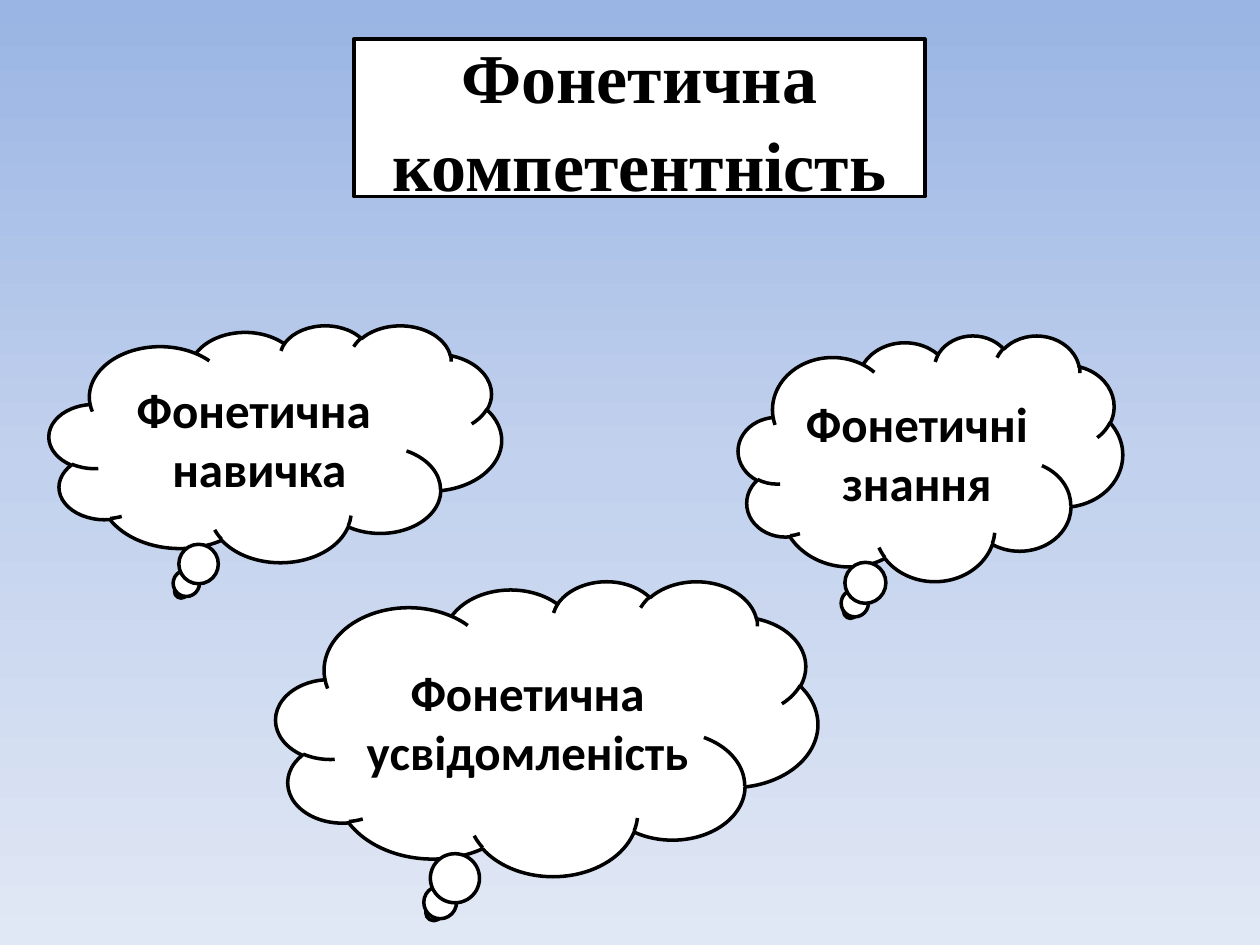
from lxml.etree import SubElement
from pptx import Presentation
from pptx.dml.color import RGBColor
from pptx.enum.shapes import MSO_SHAPE as Shape
from pptx.enum.text import MSO_ANCHOR as Anchor, MSO_AUTO_SIZE as AutoSize, PP_ALIGN as Align
from pptx.oxml.ns import qn
from pptx.util import Inches, Pt

COLORS = {"paper": "FFFFFF", "ink": "000000"}
BACKGROUND_STOPS = [(0, "9AB5E4"), (50, "C2D1ED"), (100, "E1E8F5")]
CLOUDS = [
    ("Фонетична \nнавичка", (0.39, 2.58, 3.59, 1.88)),
    ("Фонетичні \nзнання", (5.86, 2.66, 3.05, 1.95)),
    ("Фонетична\nусвідомленість", (2.19, 4.61, 4.3, 2.34)),
]


def fill_and_label(shape, text, font_name, size):
    """White shape with a black outline and bold centred text."""
    shape.shadow.inherit = False
    shape.fill.solid()
    shape.fill.fore_color.rgb = RGBColor.from_string(COLORS["paper"])
    shape.line.color.rgb = RGBColor.from_string(COLORS["ink"])
    shape.line.width = Pt(2)
    frame = shape.text_frame
    frame.text = text
    frame.word_wrap = True
    frame.auto_size = AutoSize.NONE
    frame.vertical_anchor = Anchor.MIDDLE
    for paragraph in frame.paragraphs:
        paragraph.alignment = Align.CENTER
        for run in paragraph.runs:
            run.font.name = font_name
            run.font.size = Pt(size)
            run.font.bold = True
            run.font.color.rgb = RGBColor.from_string(COLORS["ink"])


presentation = Presentation()
presentation.slide_width = Inches(10)
presentation.slide_height = Inches(7.5)
slide = presentation.slides.add_slide(presentation.slide_layouts[5])

# Vertical three-stop background
background = slide.background.fill
background.gradient()
gradient = slide.background._cSld.find(".//" + qn("a:gradFill"))
stops = gradient.find(qn("a:gsLst"))
for stop in list(stops):
    stops.remove(stop)
for position, color in BACKGROUND_STOPS:
    stop = SubElement(stops, qn("a:gs"), pos=str(position * 1000))
    SubElement(stop, qn("a:srgbClr"), val=color)
background.gradient_angle = 270

# Title with two rounded corners
title = slide.shapes.title
title.left, title.top = Inches(2.81), Inches(0.31)
title.width, title.height = Inches(4.53), Inches(1.25)
geometry = SubElement(title._element.spPr, qn("a:prstGeom"), prst="round2DiagRect")
SubElement(geometry, qn("a:avLst"))
fill_and_label(title, "Фонетична\nкомпетентність", "Times New Roman", 40)
for paragraph in title.text_frame.paragraphs:
    paragraph.line_spacing = 1.04

# Thought clouds
for text, box in CLOUDS:
    cloud = slide.shapes.add_shape(Shape.CLOUD_CALLOUT, *map(Inches, box))
    fill_and_label(cloud, text, "Calibri", 28)

presentation.save("out.pptx")
